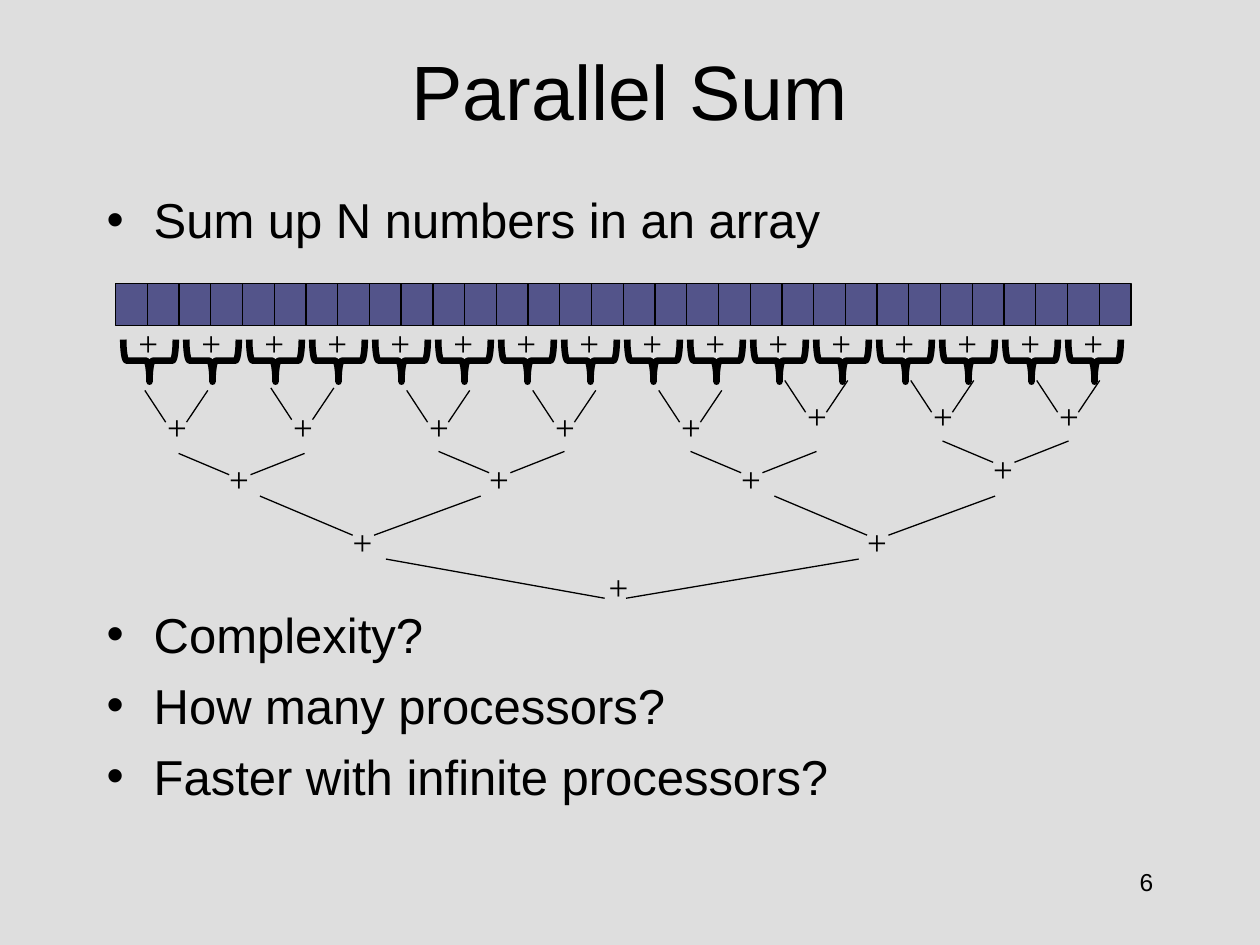
from dataclasses import dataclass

from lxml.etree import SubElement
from pptx import Presentation
from pptx.dml.color import RGBColor
from pptx.enum.shapes import MSO_CONNECTOR, MSO_SHAPE
from pptx.enum.text import MSO_ANCHOR, PP_ALIGN
from pptx.oxml.ns import qn
from pptx.util import Cm, Pt

TITLE = "Parallel Sum"
NUMBER = "6"
# (text, space before in points); the wide space leaves room for the tree
BULLETS = [
    ("Sum up N numbers in an array", 0),
    ("Complexity?", 203.3),
    ("How many processors?", 7),
    ("Faster with infinite processors?", 7),
]
CELLS, PAIRS = 32, 16

# Each level, in cm: span between the upper line ends, the two meeting
# points, drop, plus offset, and nodes as (line x, line y, plus y).
LEVELS = [
    dict(span=1.27, meet=(0.42, 0.84), drop=0.64, shift=0.2, nodes=[
        (2.92, 7.87, 8.05), (5.46, 7.82, 8.05), (8.2, 7.87, 8.05),
        (10.74, 7.87, 8.05), (13.28, 7.87, 8.05), (15.82, 7.67, 7.83),
        (18.36, 7.67, 7.83), (20.9, 7.67, 7.83)]),
    dict(span=2.54, meet=(1.02, 1.45), drop=0.43, shift=0.77, nodes=[
        (3.6, 9.14, 9.1), (8.84, 9.1, 9.1),
        (13.92, 9.1, 9.1), (19, 8.89, 8.89)]),
    dict(span=4.45, meet=(1.87, 2.3), drop=0.79, shift=1.62, nodes=[
        (5.24, 10, 10.37), (15.61, 10, 10.37)]),
    dict(span=9.53, meet=(4.41, 4.84), drop=0.79, shift=4.24, nodes=[
        (7.78, 11.27, 11.28)]),
]


@dataclass(frozen=True)
class Theme:
    back: RGBColor = RGBColor(0xDE, 0xDE, 0xDE)
    ink: RGBColor = RGBColor(0, 0, 0)
    cell: RGBColor = RGBColor(0x53, 0x54, 0x8A)
    sans: str = "Arial"
    serif: str = "Times New Roman"
    title: int = 44
    body: int = 28
    plus: int = 20
    small: int = 14
    thin: float = 0.75
    thick: float = 3.75


THEME = Theme()


def add_box(slide, x, y, w, h, wrap=True):
    frame = slide.shapes.add_textbox(Cm(x), Cm(y), Cm(w), Cm(h)).text_frame
    frame.word_wrap = wrap
    return frame


def write(para, text, size, face=THEME.sans, align=PP_ALIGN.LEFT):
    para.alignment = align
    run = para.add_run()
    run.text = text
    run.font.size = Pt(size)
    run.font.name = face
    run.font.color.rgb = THEME.ink


def add_bullet(para):
    props = para._p.get_or_add_pPr()
    props.set("marL", str(Cm(0.95)))
    props.set("indent", str(-Cm(0.95)))
    SubElement(props, qn("a:buFont")).set("typeface", THEME.sans)
    SubElement(props, qn("a:buChar")).set("char", "•")


def add_form(slide, kind, x, y, w, h, width):
    form = slide.shapes.add_shape(kind, Cm(x), Cm(y), Cm(w), Cm(h))
    form.shadow.inherit = False
    form.line.color.rgb = THEME.ink
    form.line.width = Pt(width)
    return form


def add_line(slide, *ends):
    line = slide.shapes.add_connector(
        MSO_CONNECTOR.STRAIGHT, *[Cm(end) for end in ends])
    line.line.color.rgb = THEME.ink
    line.line.width = Pt(THEME.thin)
    SubElement(line._element.spPr, qn("a:effectLst"))


def add_plus(slide, x, y):
    frame = add_box(slide, x, y, 0.92, 1.11, wrap=False)
    write(frame.paragraphs[0], "+", THEME.plus, THEME.serif)


def add_texts(slide):
    frame = add_box(slide, 1.9, 0.21, 21.6, 3.18)
    frame.vertical_anchor = MSO_ANCHOR.MIDDLE
    write(frame.paragraphs[0], TITLE, THEME.title, align=PP_ALIGN.CENTER)

    frame = add_box(slide, 1.9, 3.7, 21.6, 13.2)
    for i, (text, space) in enumerate(BULLETS):
        para = frame.add_paragraph() if i else frame.paragraphs[0]
        write(para, text, THEME.body)
        para.space_before = Pt(space)
        add_bullet(para)

    frame = add_box(slide, 18.2, 17.36, 5.3, 1.27)
    write(frame.paragraphs[0], NUMBER, THEME.small, align=PP_ALIGN.RIGHT)


def add_array(slide):
    pitch = 20.47 / CELLS
    for i in range(CELLS):
        cell = add_form(slide, MSO_SHAPE.RECTANGLE, 2.33 + i * pitch, 5.72,
                        pitch, 0.85, THEME.thin)
        cell.fill.solid()
        cell.fill.fore_color.rgb = THEME.cell


def add_pairs(slide):
    for i in range(PAIRS):
        step = 1.27 * i
        brace = add_form(slide, MSO_SHAPE.LEFT_BRACE, 2.59 + step, 6.74,
                         0.85, 1.06, THEME.thick)
        brace.rotation = 270
        brace.adjustments[0] = 0.08
        brace.fill.background()
        add_plus(slide, 2.54 + step, 6.35)


def add_tree(slide):
    for level in LEVELS:
        near, far = level["meet"]
        for x, y, top in level["nodes"]:
            low = y + level["drop"]
            add_line(slide, x, y, x + near, low)
            add_line(slide, x + level["span"], y, x + far, low)
            add_plus(slide, x + level["shift"], top)


def main():
    deck = Presentation()
    deck.slide_width, deck.slide_height = Cm(25.4), Cm(19.05)
    slide = deck.slides.add_slide(deck.slide_layouts[6])
    slide.background.fill.solid()
    slide.background.fill.fore_color.rgb = THEME.back
    for add in (add_texts, add_array, add_pairs, add_tree):
        add(slide)
    deck.save("out.pptx")


if __name__ == "__main__":
    main()
